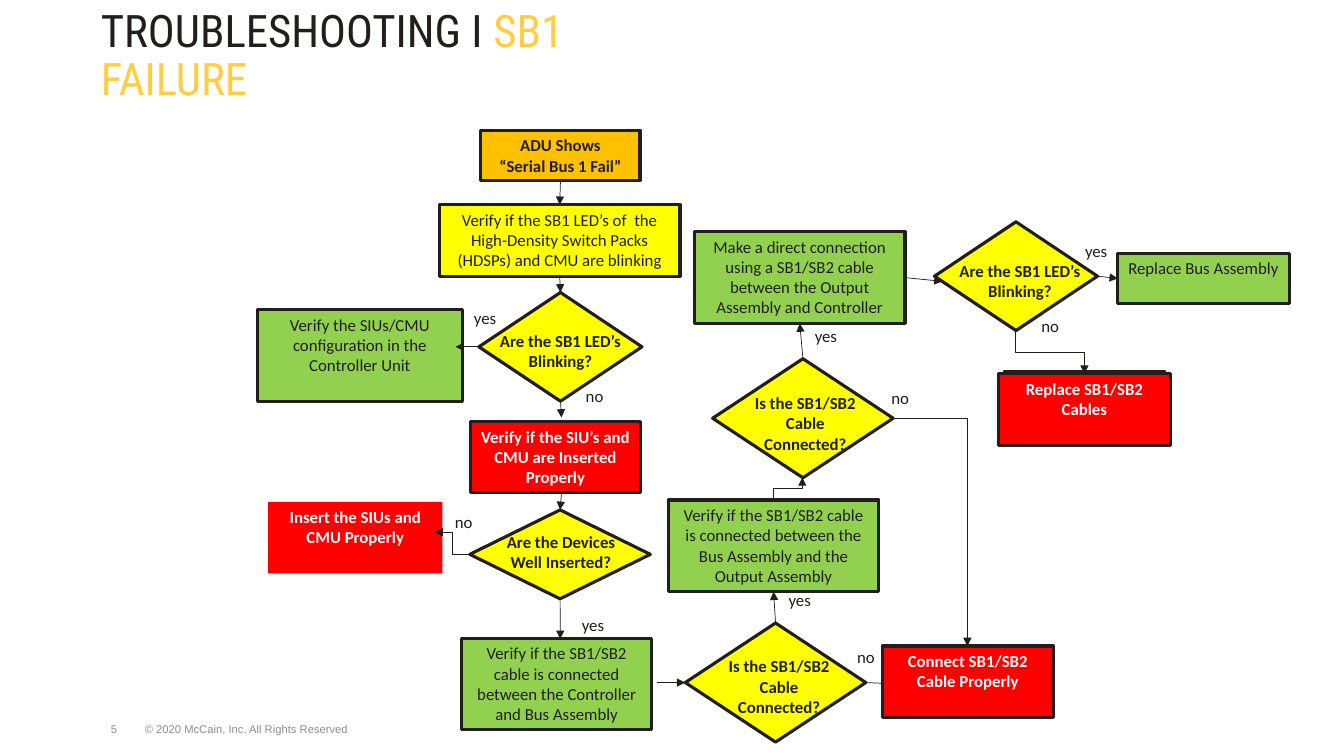
from dataclasses import dataclass
from enum import Enum
from typing import Optional

from lxml.etree import SubElement
from pptx import Presentation
from pptx.dml.color import RGBColor
from pptx.enum.shapes import MSO_CONNECTOR, MSO_SHAPE
from pptx.enum.text import MSO_ANCHOR as ANCHOR, PP_ALIGN as ALIGN
from pptx.oxml.ns import qn
from pptx.util import Cm, Pt

INK, WHITE, GREY, GOLD = "211E1C", "FFFFFF", "8D8D8D", "FFCD41"
AMBER, YELLOW, GREEN, RED = "FFC000", "FFFF00", "92D050", "FF0000"
TOP, LEFT, BOTTOM, RIGHT = range(4)

Box = tuple[float, float, float, float]
End = tuple  # (x, y) in cm, or (shape name, side)


class Route(Enum):
    STRAIGHT = 0
    ACROSS = 1
    UPRIGHT = 2
    CORNER = 3


@dataclass
class Step:
    name: str
    box: Box
    fill: str
    text: str
    bold: bool = False
    border: bool = True


@dataclass
class Decision:
    name: str
    box: Box
    text: str
    text_box: Box


@dataclass
class Answer:
    text: str
    x: float
    y: float


@dataclass
class Link:
    start: End
    end: End
    route: Route = Route.STRAIGHT


STEPS = [
    Step("alarm", (12.12, 3.28, 4.01, 1.27), AMBER, "ADU Shows\n“Serial Bus 1 Fail”", True),
    Step("check LEDs", (11.07, 5.16, 6.07, 1.8), YELLOW,
         "Verify if the SB1 LED’s of  the High-Density Switch Packs (HDSPs) and CMU are blinking"),
    Step("check setup", (6.48, 7.8, 5.18, 2.31), GREEN,
         "Verify the SIUs/CMU configuration in the Controller Unit"),
    Step("check devices", (11.86, 10.62, 4.28, 1.8), RED,
         "Verify if the SIU’s and CMU are Inserted Properly", True),
    Step("insert devices", (6.76, 12.65, 4.39, 1.8), RED,
         "Insert the SIUs and CMU Properly", True, False),
    Step("check controller cable", (11.63, 16.08, 4.8, 2.31), GREEN,
         "Verify if the SB1/SB2 cable is connected between the Controller and Bus Assembly"),
    Step("check output cable", (16.84, 12.6, 5.31, 2.31), GREEN,
         "Verify if the SB1/SB2 cable is connected between the Bus Assembly and the Output Assembly"),
    Step("direct cable", (17.5, 5.84, 5.31, 2.31), GREEN,
         "Make a direct connection using a SB1/SB2 cable between the Output Assembly and Controller"),
    Step("replace cables", (25.17, 9.42, 4.32, 1.8), RED, "Replace SB1/SB2 Cables", True),
    Step("replace bus", (28.17, 6.38, 4.32, 1.27), GREEN, "Replace Bus Assembly"),
]
CONNECT_CABLE = Step("connect cable", (22.23, 16.28, 4.32, 1.8), RED,
                     "Connect SB1/SB2 Cable Properly", True)
CABLES_BACK_FRAME = (25.3, 9.35, 4.06, 1.7)

BLINKING = "Are the SB1 LED’s Blinking?"
CONNECTED = "Is the SB1/SB2 Cable Connected?"
DECISIONS = [
    Decision("LEDs?", (12.07, 7.37, 4.11, 2.74), BLINKING, (12.17, 8.2, 3.91, 1.27)),
    Decision("devices?", (11.84, 12.85, 4.55, 2.24), "Are the Devices\vWell Inserted?",
             (12.07, 13.28, 4.14, 1.27)),
    Decision("controller cable?", (17.27, 15.7, 4.55, 3), CONNECTED, (17.83, 16.41, 3.61, 1.8)),
    Decision("output cable?", (17.96, 9.04, 4.55, 3), CONNECTED, (18.49, 9.78, 3.61, 1.8)),
    Decision("LEDs now?", (23.55, 5.59, 4.11, 2.74), BLINKING, (23.75, 6.45, 3.91, 1.27)),
]

ANSWERS = [
    Answer("yes", 11.68, 7.62), Answer("no", 14.5, 9.6),
    Answer("no", 11.2, 12.78), Answer("yes", 14.4, 15.37),
    Answer("yes", 19.61, 14.73), Answer("no", 21.34, 16.18),
    Answer("yes", 20.27, 8.08), Answer("no", 22.2, 9.65),
    Answer("yes", 27.08, 5.94), Answer("no", 25.98, 7.82),
]

LINKS = [
    Link(("alarm", BOTTOM), ("check LEDs", TOP)),
    Link(("check LEDs", BOTTOM), ("LEDs?", TOP)),
    Link(("LEDs?", LEFT), (11.48, 8.74)),
    Link(("LEDs?", BOTTOM), (14.15, 10.52)),
    Link((14.15, 12.42), ("devices?", TOP)),
    Link((11.84, 13.97), (10.95, 13.41), Route.ACROSS),
    Link(("devices?", BOTTOM), (14.12, 16.1)),
    Link((16.56, 17.2), ("controller cable?", LEFT)),
    Link(("controller cable?", TOP), ("check output cable", BOTTOM)),
    Link(("controller cable?", RIGHT), (24.74, 17.32)),
    Link((19.48, 12.6), (20.22, 12.03), Route.UPRIGHT),
    Link(("output cable?", TOP), ("direct cable", BOTTOM)),
    Link((22.5, 10.54), (24.38, 16.28), Route.CORNER),
    Link(("direct cable", RIGHT), (23.75, 7.09)),
    Link(("LEDs now?", RIGHT), ("replace bus", LEFT)),
    Link((25.6, 8.33), (27.33, 9.42), Route.UPRIGHT),
]


def rgb(value: str) -> RGBColor:
    return RGBColor.from_string(value)


def style(r, size: float, name: str, color: str, bold: bool = False) -> None:
    r.font.size, r.font.name, r.font.bold = Pt(size), name, bold
    r.font.color.rgb = rgb(color)


def write(sp, text: str, color: str = INK, bold: bool = False, size: float = 12,
          name: str = "Calibri", align=ALIGN.CENTER, anchor=ANCHOR.TOP, wrap: bool = True) -> None:
    tf = sp.text_frame
    tf.text, tf.word_wrap, tf.vertical_anchor = text, wrap, anchor
    for p in tf.paragraphs:
        p.alignment = align
        for r in p.runs:
            style(r, size, name, color, bold)


def add_text(s, box: Box, text: str, **options) -> None:
    write(s.shapes.add_textbox(*map(Cm, box)), text, **options)


def add_block(s, kind, box: Box, fill: Optional[str], border: float):
    """Preset shape; no fill or no border when fill is None or border is 0."""
    sp = s.shapes.add_shape(kind, *map(Cm, box))
    sp.shadow.inherit = False
    if fill:
        sp.fill.solid()
        sp.fill.fore_color.rgb = rgb(fill)
    else:
        sp.fill.background()
    if border:
        sp.line.width = Pt(border)
        sp.line.color.rgb = rgb(INK)
    else:
        sp.line.fill.background()
    return sp


def add_step(s, step: Step):
    sp = add_block(s, MSO_SHAPE.RECTANGLE, step.box, step.fill, 2.25 if step.border else 0)
    write(sp, step.text, WHITE if step.fill == RED else INK, step.bold)
    return sp


def add_decision(s, d: Decision):
    sp = add_block(s, MSO_SHAPE.FLOWCHART_DECISION, d.box, YELLOW, 2.25)
    add_text(s, d.text_box, d.text, bold=True)
    return sp


def add_link(s, link: Link, blocks: dict) -> None:
    glued = [isinstance(end[0], str) for end in (link.start, link.end)]
    x1, y1 = (0, 0) if glued[0] else link.start
    x2, y2 = (0, 0) if glued[1] else link.end
    down = y2 > y1
    if link.route is Route.UPRIGHT:  # lay the elbow flat here, turn it below
        mid_x, mid_y, half_w, half_h = (x1 + x2) / 2, (y1 + y2) / 2, abs(y2 - y1) / 2, (x2 - x1) / 2
        if down:
            half_h = -half_h
        x1, y1, x2, y2 = mid_x - half_w, mid_y - half_h, mid_x + half_w, mid_y + half_h
    kind = MSO_CONNECTOR.STRAIGHT if link.route is Route.STRAIGHT else MSO_CONNECTOR.ELBOW
    c = s.shapes.add_connector(kind, *map(Cm, (x1, y1, x2, y2)))
    if glued[0]:
        c.begin_connect(blocks[link.start[0]], link.start[1])
    if glued[1]:
        c.end_connect(blocks[link.end[0]], link.end[1])
    c.line.width = Pt(0.5)
    c.line.color.rgb = rgb(INK)
    sp_pr = c.element.spPr
    if link.route is Route.UPRIGHT:
        sp_pr.find(qn("a:xfrm")).set("rot", str((90 if down else 270) * 60000))
    if link.route is Route.CORNER:
        sp_pr.find(qn("a:prstGeom")).set("prst", "bentConnector2")
    SubElement(sp_pr.find(qn("a:ln")), qn("a:tailEnd"), type="triangle")
    SubElement(sp_pr, qn("a:effectLst"))


def add_title(s) -> None:
    title = s.shapes.title
    title.left, title.top, title.width, title.height = map(Cm, (2.29, 0.76, 14.66, 2.03))
    write(title, "TROUBLESHOOTING I ", size=32, name="Roboto Condensed",
          align=ALIGN.LEFT, anchor=ANCHOR.BOTTOM)
    p = title.text_frame.paragraphs[0]
    p.line_spacing = 0.9
    r = p.add_run()
    r.text = "SB1 FAILURE"
    style(r, 32, "Roboto Condensed", GOLD)


def main() -> None:
    prs = Presentation()
    prs.slide_width, prs.slide_height = Cm(33.87), Cm(19.05)
    s = prs.slides.add_slide(prs.slide_layouts[5])
    add_title(s)
    footer = dict(color=GREY, size=8, name="Arial", anchor=ANCHOR.BOTTOM)
    add_text(s, (2.34, 17.65, 1.07, 1.02), "5", **footer)
    add_text(s, (3.4, 17.65, 9.25, 1.02), "© 2020 McCain, Inc. All Rights Reserved",
             align=ALIGN.LEFT, **footer)
    add_block(s, MSO_SHAPE.FLOWCHART_PROCESS, CABLES_BACK_FRAME, None, 1)
    blocks = {step.name: add_step(s, step) for step in STEPS}
    blocks |= {d.name: add_decision(s, d) for d in DECISIONS}
    for link in LINKS:
        add_link(s, link, blocks)
    add_step(s, CONNECT_CABLE)
    for a in ANSWERS:
        add_text(s, (a.x, a.y, 1.09 if a.text == "yes" else 0.97, 0.76), a.text, wrap=False)
    prs.save("out.pptx")


if __name__ == "__main__":
    main()
